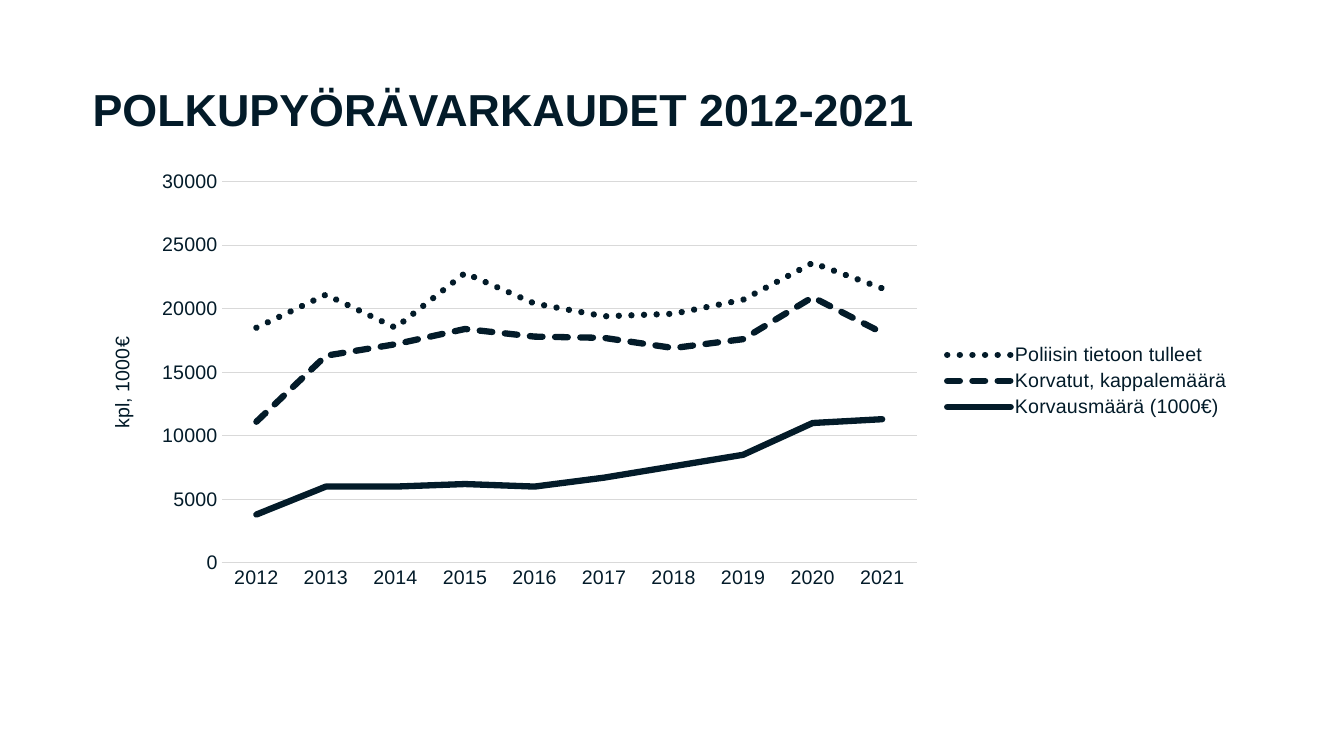
"""Build a slide with a line chart of bicycle thefts from 2012 to 2021."""
from lxml import etree
from pptx import Presentation
from pptx.chart import data
from pptx.dml.color import RGBColor
from pptx.enum import chart as charts, dml, text
from pptx.oxml import ns
from pptx.util import Cm, Pt

COLORS = {"ink": "031B29", "grid": "D9D9D9", "paper": "FFFFFF"}
FONT = "Arial"
SERIES = [
    ("Poliisin tietoon tulleet", dml.MSO_LINE.ROUND_DOT,
     (18500, 21100, 18500, 22800, 20400, 19400, 19600, 20700, 23600, 21600)),
    ("Korvatut, kappalemäärä", dml.MSO_LINE.SQUARE_DOT,
     (11100, 16300, 17200, 18400, 17800, 17700, 16900, 17600, 20900, 18100)),
    ("Korvausmäärä (1000€)", dml.MSO_LINE.SOLID,
     (3800, 6000, 6000, 6200, 6000, 6700, 7600, 8500, 11000, 11300)),
]
DASHES = {dml.MSO_LINE.ROUND_DOT: "sysDot", dml.MSO_LINE.SQUARE_DOT: "sysDash"}


def style_font(font, size, bold=False):
    for name, value in {"name": FONT, "size": Pt(size), "bold": bold}.items():
        setattr(font, name, value)
    font.color.rgb = RGBColor.from_string(COLORS["ink"])


def set_layout(layout, **fractions):
    for child in list(layout):
        layout.remove(child)
    manual = etree.SubElement(layout, ns.qn("c:manualLayout"))
    settings = {"xMode": "edge", "yMode": "edge", **fractions}
    if "w" in fractions:
        settings = {"layoutTarget": "inner", **settings}
    for tag, value in settings.items():
        etree.SubElement(manual, ns.qn(f"c:{tag}")).set("val", str(value))


deck = Presentation()
deck.slide_width, deck.slide_height = Cm(33.87), Cm(19.05)
page = deck.slides.add_slide(deck.slide_layouts[5])
page.background.fill.solid()
page.background.fill.fore_color.rgb = RGBColor.from_string(COLORS["paper"])

title = page.shapes.title
place = {"left": Cm(2.08), "top": Cm(0.99), "width": Cm(29.21), "height": Cm(3.68)}
for name, value in place.items():
    setattr(title, name, value)
frame = title.text_frame
frame.text = "POLKUPYÖRÄVARKAUDET 2012-2021"
frame.auto_size = text.MSO_AUTO_SIZE.NONE
frame.vertical_anchor = text.MSO_ANCHOR.MIDDLE
para = frame.paragraphs[0]
para.alignment = text.PP_ALIGN.LEFT
para.line_spacing = 0.9
style_font(para.runs[0].font, 32, True)

thefts = data.CategoryChartData(number_format="General")
thefts.categories = [str(year) for year in range(2012, 2022)]
for name, dash, values in SERIES:
    thefts.add_series(name, values)
chart = page.shapes.add_chart(charts.XL_CHART_TYPE.LINE, Cm(2.08), Cm(4.14),
                              Cm(29.21), Cm(10.92), thefts).chart
chart.has_title = False
style_font(chart.font, 14)
chart.plots[0].vary_by_categories = False

for line, (name, dash, values) in zip(chart.plots[0].series, SERIES):
    line.smooth = False
    line.marker.style = charts.XL_MARKER_STYLE.NONE
    stroke = line.format.line
    stroke.width = Pt(4.5)
    stroke.color.rgb = RGBColor.from_string(COLORS["ink"])
    stroke.dash_style = dash
    outline = line.format.line._get_or_add_ln()
    outline.set("cap", "rnd")
    if dash in DASHES:
        outline.find(ns.qn("a:prstDash")).set("val", DASHES[dash])

years, amounts = chart.category_axis, chart.value_axis
for axis in (years, amounts):
    axis.major_tick_mark = axis.minor_tick_mark = charts.XL_TICK_MARK.NONE
    style_font(axis.tick_labels.font, 14)
amounts.minimum_scale, amounts.maximum_scale, amounts.major_unit = 0, 30000, 5000
amounts.format.line.fill.background()
amounts.has_major_gridlines = True
for stroke in (years.format.line, amounts.major_gridlines.format.line):
    stroke.width = Pt(0.75)
    stroke.color.rgb = RGBColor.from_string(COLORS["grid"])

amounts.has_title = True
caption = amounts.axis_title
caption.text_frame.text = "kpl, 1000€"
style_font(caption.text_frame.paragraphs[0].runs[0].font, 14)
turn = caption.text_frame._txBody.find(ns.qn("a:bodyPr"))
turn.set("rot", "-5400000")
turn.set("vert", "horz")
set_layout(caption._element.get_or_add_layout()
           if hasattr(caption._element, "get_or_add_layout")
           else caption._element.find(ns.qn("c:layout")), x=0.02, y=0.39)

chart.has_legend = True
chart.legend.position = charts.XL_LEGEND_POSITION.RIGHT
chart.legend.include_in_layout = False
style_font(chart.legend.font, 14)

area = chart._chartSpace.chart.plotArea
layout = area.find(ns.qn("c:layout"))
if layout is None:
    layout = etree.Element(ns.qn("c:layout"))
    area.insert(0, layout)
set_layout(layout, x=0.12, y=0.04, w=0.6, h=0.88)

deck.save("out.pptx")
